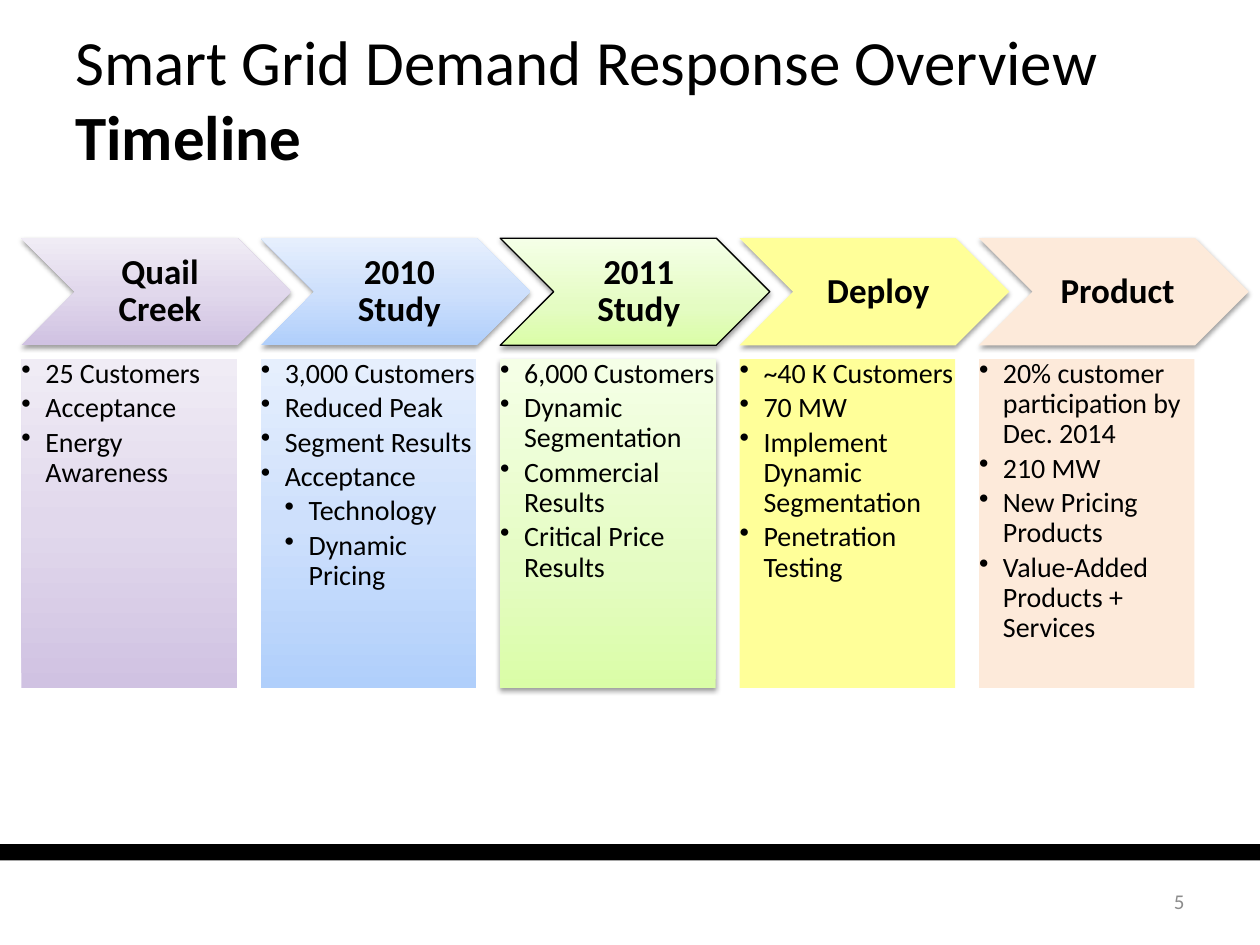
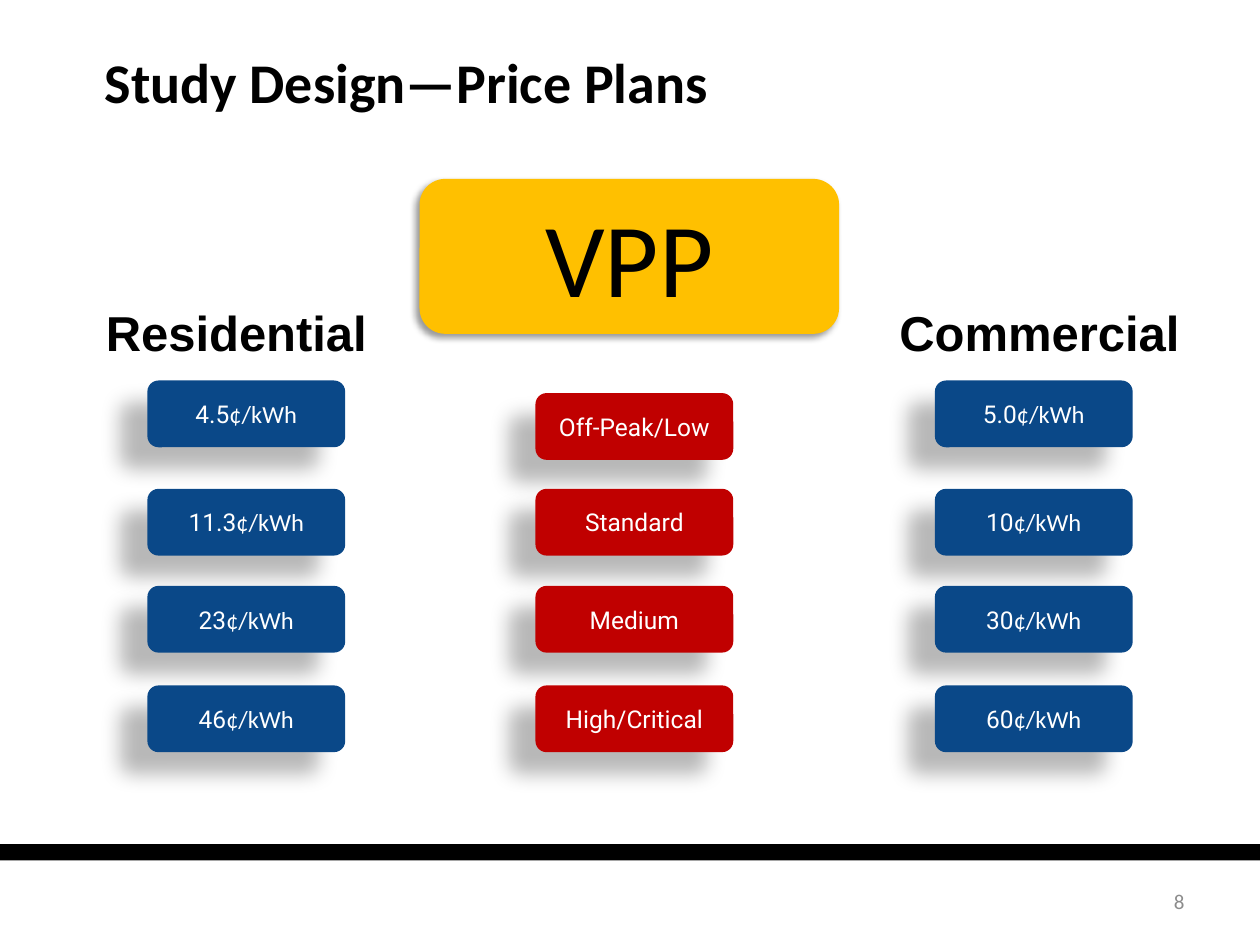
"""Build two slides on a smart grid study: its timeline and its price plans."""
from lxml import etree
from pptx import Presentation
from pptx.dml.color import RGBColor
from pptx.enum import shapes, text
from pptx.oxml import ns
from pptx.util import Inches, Pt

BLACK = RGBColor(0x00, 0x00, 0x00)
WHITE = RGBColor(0xFF, 0xFF, 0xFF)
GREY = RGBColor(0x8C, 0x8C, 0x8C)
RED = RGBColor(0xC0, 0x00, 0x00)
BLUE = RGBColor(0x0A, 0x48, 0x88)
AMBER = RGBColor(0xFF, 0xC0, 0x00)
YELLOW = RGBColor(0xFF, 0xFF, 0x99)
PEACH = RGBColor(0xFD, 0xEA, 0xDA)
PURPLES = [(0, RGBColor(0xD0, 0xC2, 0xE2)), (50, RGBColor(0xE1, 0xD8, 0xEC)), (100, RGBColor(0xF0, 0xEC, 0xF5))]
BLUES = [(0, RGBColor(0xB0, 0xCF, 0xFB)), (50, RGBColor(0xCE, 0xE0, 0xFC)), (100, RGBColor(0xE6, 0xEF, 0xFD))]
GREENS = [(0, RGBColor(0xDA, 0xFD, 0xA7)), (35, RGBColor(0xE4, 0xFC, 0xC2)), (100, RGBColor(0xF5, 0xFF, 0xE7))]

BODY_FONT, LABEL_FONT, HEADING_FONT = "Calibri", "Roboto", "Arial"
LEFT, CENTER, RIGHT = text.PP_ALIGN.LEFT, text.PP_ALIGN.CENTER, text.PP_ALIGN.RIGHT
TOP, MIDDLE = text.MSO_ANCHOR.TOP, text.MSO_ANCHOR.MIDDLE
RECTANGLE = shapes.MSO_SHAPE.RECTANGLE
ROUNDED = shapes.MSO_SHAPE.ROUNDED_RECTANGLE
CHEVRON = shapes.MSO_SHAPE.CHEVRON
DEFAULT_INSETS = (0.1, 0.05, 0.1, 0.05)
TIGHT_INSETS = (0.09, 0.04, 0.09, 0.04)
NO_INSETS = (0, 0, 0, 0)

STAGE_SHADOW = (38, 3.1, 1.6, 90)
PLAN_SHADOW = (40, 4, 3, 135)
PRICE_SHADOW = (28, 11.8, 19.7, 141)

STAGES = [
    {"name": "Quail Creek", "fill": PURPLES,
     "points": [(0, "25 Customers"), (0, "Acceptance"), (0, "Energy Awareness")]},
    {"name": "2010 Study", "fill": BLUES,
     "points": [(0, "3,000 Customers"), (0, "Reduced Peak"), (0, "Segment Results"),
                (0, "Acceptance"), (1, "Technology"), (1, "Dynamic Pricing")]},
    {"name": "2011 Study", "fill": GREENS, "current": True,
     "points": [(0, "6,000 Customers"), (0, "Dynamic Segmentation"),
                (0, "Commercial Results"), (0, "Critical Price Results")]},
    {"name": "Deploy", "fill": YELLOW,
     "points": [(0, "~40 K Customers"), (0, "70 MW"),
                (0, "Implement Dynamic Segmentation"), (0, "Penetration Testing")]},
    {"name": "Product", "fill": PEACH,
     "points": [(0, "20% customer participation by Dec. 2014"), (0, "210 MW"),
                (0, "New Pricing Products"), (0, "Value-Added Products + Services")]},
]
STAGE_LEFT, STAGE_STEP = 0.17, 1.9

PRICE_UNIT = "¢/kWh"
PRICE_COLUMNS = [
    {"left": 4.25, "first_top": 3.12, "fill": RED, "unit": "",
     "labels": ["Off-Peak/Low", "Standard", "Medium", "High/Critical"]},
    {"left": 1.17, "first_top": 3.02, "fill": BLUE, "unit": PRICE_UNIT,
     "labels": ["4.5", "11.3", "23", "46"]},
    {"left": 7.42, "first_top": 3.02, "fill": BLUE, "unit": PRICE_UNIT,
     "labels": ["5.0", "10", "30", "60"]},
]
LATER_TOPS = [3.88, 4.65, 5.44]
CUSTOMER_HEADINGS = [("Residential", (0.5, 2.36, 2.75, 0.56)), ("Commercial", (7, 2.36, 2.5, 0.56))]


def add_child(parent, tag, **attributes):
    """Append a DrawingML element and return it."""
    return etree.SubElement(parent, ns.qn(tag), {key: str(value) for key, value in attributes.items()})


def paint(shape, fill):
    """Fill with one colour, or with a gradient that rises from the first stop."""
    if isinstance(fill, RGBColor):
        shape.fill.solid()
        shape.fill.fore_color.rgb = fill
        return
    shape.fill.gradient()
    shape.fill.gradient_angle = 90
    stops = shape._element.spPr.find(".//" + ns.qn("a:gsLst"))
    for stop in list(stops):
        stops.remove(stop)
    for percent, color in fill:
        add_child(add_child(stops, "a:gs", pos=percent * 1000), "a:srgbClr", val=color)


def add_block(page, kind, place, fill, shadow=None):
    """Add a filled shape, with a shadow of (opacity, blur, distance, angle) if given."""
    shape = page.shapes.add_shape(kind, *map(Inches, place))
    paint(shape, fill)
    shape.line.fill.background()
    shape.shadow.inherit = False
    if shadow:
        opacity, blur, distance, angle = shadow
        effects = shape._element.spPr.find(ns.qn("a:effectLst"))
        outer = add_child(effects, "a:outerShdw", blurRad=Pt(blur), dist=Pt(distance),
                          dir=angle * 60000, algn="ctr", rotWithShape=0)
        color = add_child(outer, "a:srgbClr", val=BLACK)
        add_child(color, "a:alpha", val=opacity * 1000)
    return shape


def set_frame(shape, insets, anchor):
    """Wrap the text of a shape and set its margins."""
    frame = shape.text_frame
    frame.word_wrap = True
    frame.vertical_anchor = anchor
    frame.margin_left, frame.margin_top, frame.margin_right, frame.margin_bottom = map(Inches, insets)
    return frame


def style(span, size, color=BLACK, bold=False, font=BODY_FONT):
    """Set the font of a run."""
    span.font.size, span.font.name, span.font.bold = Pt(size), font, bold
    span.font.color.rgb = color


def write(shape, words, size, align=LEFT, insets=DEFAULT_INSETS, anchor=MIDDLE, **look):
    """Write one paragraph into a shape and return it."""
    frame = set_frame(shape, insets, anchor)
    frame.text = words
    para = frame.paragraphs[0]
    para.alignment = align
    for span in para.runs:
        style(span, size, **look)
    return para


def add_label(page, place, words, size, **options):
    """Add a text box with one paragraph and return the paragraph."""
    return write(page.shapes.add_textbox(*map(Inches, place)), words, size, **options)


def add_page(deck, number):
    """Add a blank page with the shared band and page number."""
    page = deck.slides.add_slide(deck.slide_layouts[6])
    add_block(page, RECTANGLE, (-0.03, 6.7, 10.04, 0.13), BLACK)
    add_label(page, (7.17, 6.95, 2.33, 0.4), str(number), 12, align=RIGHT, color=GREY)
    return page


def add_points(shape, points):
    """Write bulleted points of (level, words) into a shape."""
    frame = set_frame(shape, NO_INSETS, TOP)
    for index, (level, words) in enumerate(points):
        para = frame.paragraphs[0] if index == 0 else frame.add_paragraph()
        para.text = words
        para.alignment = LEFT
        para.line_spacing = 0.9
        para.space_after = Pt(2.4)
        properties = para._p.get_or_add_pPr()
        properties.set("marL", str(Inches(0.19 * (level + 1))))
        properties.set("indent", str(Inches(-0.19)))
        add_child(properties, "a:buChar", char="•")
        style(para.runs[0], 16)


def build_timeline(deck):
    """Build the page with the five stages."""
    page = add_page(deck, 5)
    title = add_label(page, (0.5, 0.15, 9, 1.25), "Smart Grid Demand Response Overview\vTimeline", 36)
    title.runs[1].font.bold = True
    for index, stage in enumerate(STAGES):
        left = STAGE_LEFT + index * STAGE_STEP
        current = stage.get("current", False)
        arrow = add_block(page, CHEVRON, (left, 1.89, 2.14, 0.85), stage["fill"], STAGE_SHADOW)
        if current:
            arrow.line.color.rgb = BLACK
            arrow.line.width = Pt(0.75)
        name = write(arrow, stage["name"], 20, align=CENTER, insets=(0.09, 0.03, 0.03, 0.03), bold=True)
        name.line_spacing = 0.9
        panel = add_block(page, RECTANGLE, (left, 2.85, 1.71, 2.61), stage["fill"],
                          STAGE_SHADOW if current else None)
        add_points(panel, stage["points"])


def build_price_plans(deck):
    """Build the page with the price levels of both customer groups."""
    page = add_page(deck, 8)
    add_label(page, (0.83, 0.33, 7.58, 0.62), "Study Design—Price Plans", 32, insets=NO_INSETS, bold=True)
    for words, place in CUSTOMER_HEADINGS:
        add_label(page, place, words, 28, align=CENTER, insets=TIGHT_INSETS, anchor=TOP,
                  bold=True, font=HEADING_FONT)
    plan = add_block(page, ROUNDED, (3.33, 1.42, 3.33, 1.23), AMBER, PLAN_SHADOW)
    write(plan, "VPP", 60, align=CENTER, anchor=TOP)
    for column in PRICE_COLUMNS:
        for top, words in zip([column["first_top"], *LATER_TOPS], column["labels"]):
            price = add_block(page, ROUNDED, (column["left"], top, 1.57, 0.53), column["fill"], PRICE_SHADOW)
            para = write(price, words, 14, align=CENTER, insets=TIGHT_INSETS, color=WHITE, font=LABEL_FONT)
            if column["unit"]:
                span = para.add_run()
                span.text = column["unit"]
                style(span, 14, color=WHITE)


def main():
    """Build and save the deck."""
    deck = Presentation()
    deck.slide_width, deck.slide_height = Inches(10), Inches(7.5)
    build_timeline(deck)
    build_price_plans(deck)
    deck.save("out.pptx")


if __name__ == "__main__":
    main()
